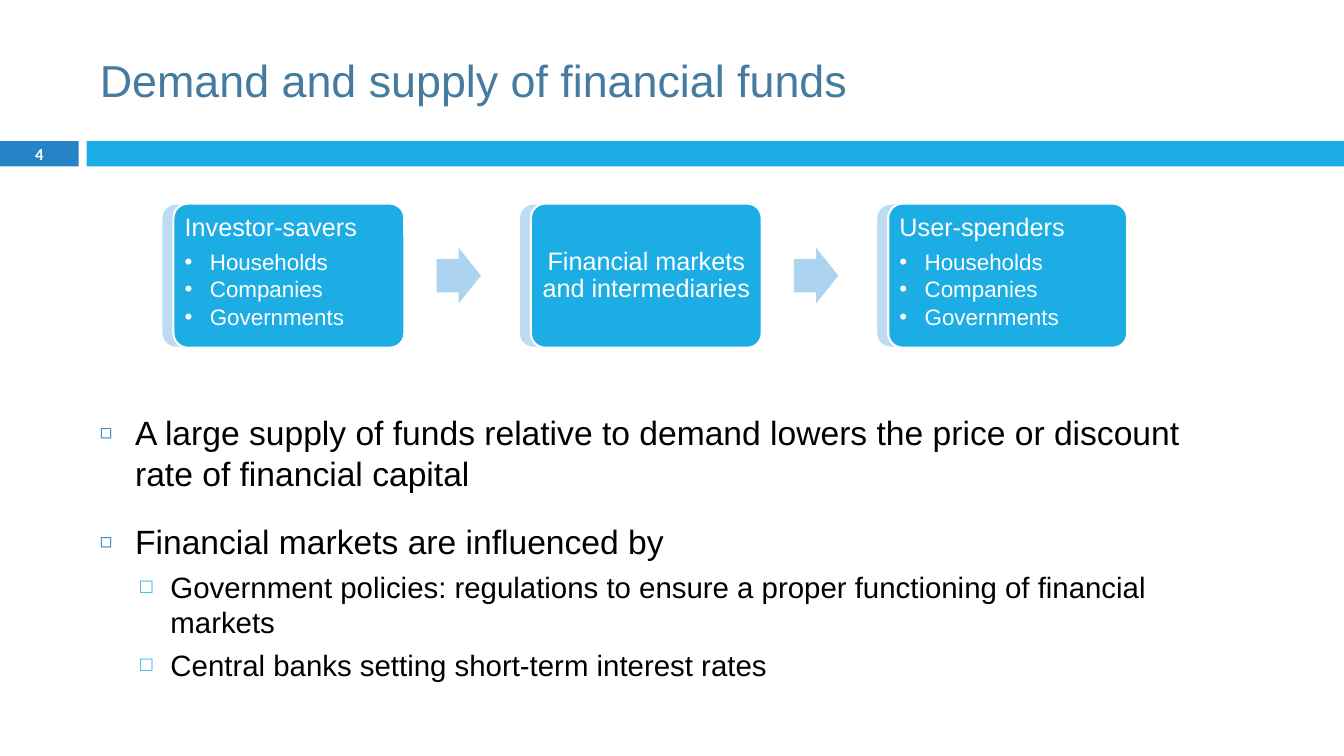
from lxml.etree import SubElement
from pptx import Presentation
from pptx.dml.color import RGBColor
from pptx.enum.shapes import MSO_SHAPE
from pptx.enum.text import MSO_ANCHOR, MSO_AUTO_SIZE, PP_ALIGN
from pptx.oxml.ns import qn
from pptx.util import Inches, Pt

BLUE, SKY, PALE, ARROW, WHITE = "2683C6", "1CADE4", "BDDBF2", "ACD3EF", "FFFFFF"
FLOW_LEFT, FLOW_TOP, FLOW_PITCH = 1.6, 2.02, 3.545
CARD_WIDTH, CARD_HEIGHT = 2.29, 1.43
SECTORS = ["Households", "Companies", "Governments"]
FLOW = [
    ("Investor-savers", SECTORS, CARD_WIDTH),
    ("Financial markets and intermediaries", [], CARD_WIDTH),
    ("User-spenders", SECTORS, 2.37),
]
POINTS = [
    (0, "A large supply of funds relative to demand lowers the price or discount rate of financial capital", 7),
    (0, "Financial markets are influenced by", 20),
    (1, "Government policies: regulations to ensure a proper functioning of financial markets", 5.5),
    (1, "Central banks setting short-term interest rates", 5.5),
]
LEVELS = [
    dict(size=24, indent=(0.35, 0.35), bullet=("◻", BLUE, 60)),
    dict(size=21, indent=(0.7, 0.3), bullet=("□", SKY, 70)),
]


def color(value):
    """Turn a hex string into a colour."""
    return RGBColor.from_string(value)


def place(s, left, top, width, height):
    """Set the position and size of a shape in inches."""
    s.left, s.top, s.width, s.height = map(Inches, (left, top, width, height))


def set_bullet(p, char, tint, percent):
    """Give a paragraph a coloured bullet sized relative to its text."""
    pPr = p._p.get_or_add_pPr()
    SubElement(SubElement(pPr, qn("a:buClr")), qn("a:srgbClr"), val=tint)
    SubElement(pPr, qn("a:buSzPct"), val=str(percent * 1000))
    SubElement(pPr, qn("a:buFont"), typeface="Arial")
    SubElement(pPr, qn("a:buChar"), char=char)


def add_text(tf, text, size=18, font="Arial", fill=WHITE, bold=False, align=PP_ALIGN.LEFT,
             level=0, before=0, after=0, spacing=1.0, indent=None, bullet=None):
    """Write one formatted paragraph into a text frame."""
    p = tf.add_paragraph() if tf.text else tf.paragraphs[0]
    p.level, p.alignment, p.line_spacing = level, align, spacing
    p.space_before, p.space_after = Pt(before), Pt(after)
    r = p.add_run()
    r.text = text
    r.font.size, r.font.name, r.font.bold = Pt(size), font, bold
    r.font.color.rgb = color(fill)
    if indent:
        margin, hang = indent
        pPr = p._p.get_or_add_pPr()
        pPr.set("marL", str(Inches(margin)))
        pPr.set("indent", str(-Inches(hang)))
    if bullet:
        set_bullet(p, *bullet)


def add_block(slide, kind, box, fill, adjustments=(), outline=None):
    """Draw a flat preset shape and return it."""
    s = slide.shapes.add_shape(kind, *map(Inches, box))
    s.shadow.inherit = False
    s.fill.solid()
    s.fill.fore_color.rgb = color(fill)
    for i, value in enumerate(adjustments):
        s.adjustments[i] = value
    if outline:
        s.line.color.rgb = color(outline)
        s.line.width = Pt(1.5)
    else:
        s.line.fill.background()
    return s


def add_header(slide, width):
    """Fill the title and draw the band with the slide number."""
    title = slide.shapes.title
    place(title, 0.89, 0.25, 11.89, 1.08)
    tf = title.text_frame
    tf.auto_size, tf.vertical_anchor = MSO_AUTO_SIZE.NONE, MSO_ANCHOR.MIDDLE
    add_text(tf, "Demand and supply of financial funds", size=32, fill="457B9E")
    number = add_block(slide, MSO_SHAPE.RECTANGLE, (0, 1.4, 0.78, 0.25), BLUE)
    number.text_frame.margin_top = number.text_frame.margin_bottom = 0
    add_text(number.text_frame, "4", size=11.9, font="Calibri", bold=True, align=PP_ALIGN.CENTER)
    add_block(slide, MSO_SHAPE.RECTANGLE, (0.86, 1.4, width - 0.86, 0.25), SKY)


def add_card(slide, left, heading, items, width):
    """Draw a card over its pale backing, with a heading and optional list."""
    for x, w, fill in ((left, CARD_WIDTH, PALE), (left + 0.12, width, SKY)):
        card = add_block(slide, MSO_SHAPE.ROUNDED_RECTANGLE, (x, FLOW_TOP, w, CARD_HEIGHT),
                         fill, [0.1], WHITE)
    tf = card.text_frame
    tf.word_wrap = True
    tf.margin_left = tf.margin_right = tf.margin_top = tf.margin_bottom = Inches(0.07)
    tf.vertical_anchor = MSO_ANCHOR.TOP if items else MSO_ANCHOR.MIDDLE
    add_text(tf, heading, after=6.3, spacing=0.9, align=PP_ALIGN.LEFT if items else PP_ALIGN.CENTER)
    for item in items:
        add_text(tf, item, size=16, level=1, after=2.4, spacing=0.9,
                 indent=(0.25, 0.25), bullet=("•", WHITE, 100))


def add_flow(slide):
    """Draw the cards in a row with an arrow between neighbours."""
    for i, (heading, items, width) in enumerate(FLOW):
        left = FLOW_LEFT + i * FLOW_PITCH
        add_card(slide, left, heading, items, width)
        if i < len(FLOW) - 1:
            add_block(slide, MSO_SHAPE.RIGHT_ARROW, (left + 2.73, 2.46, 0.44, 0.55), ARROW, [0.6, 0.5])


def add_points(slide):
    """Fill the body placeholder with the two-level list."""
    body = slide.placeholders[1]
    place(body, 0.89, 4.04, 11.21, 2.86)
    tf = body.text_frame
    tf.auto_size = MSO_AUTO_SIZE.NONE
    for level, text, before in POINTS:
        add_text(tf, text, fill="000000", level=level, before=before, **LEVELS[level])


def main():
    """Build the slide and save it."""
    prs = Presentation()
    prs.slide_width, prs.slide_height = Inches(13.33), Inches(7.5)
    slide = prs.slides.add_slide(prs.slide_layouts[1])
    add_header(slide, prs.slide_width.inches)
    add_flow(slide)
    add_points(slide)
    prs.save("out.pptx")


if __name__ == "__main__":
    main()
